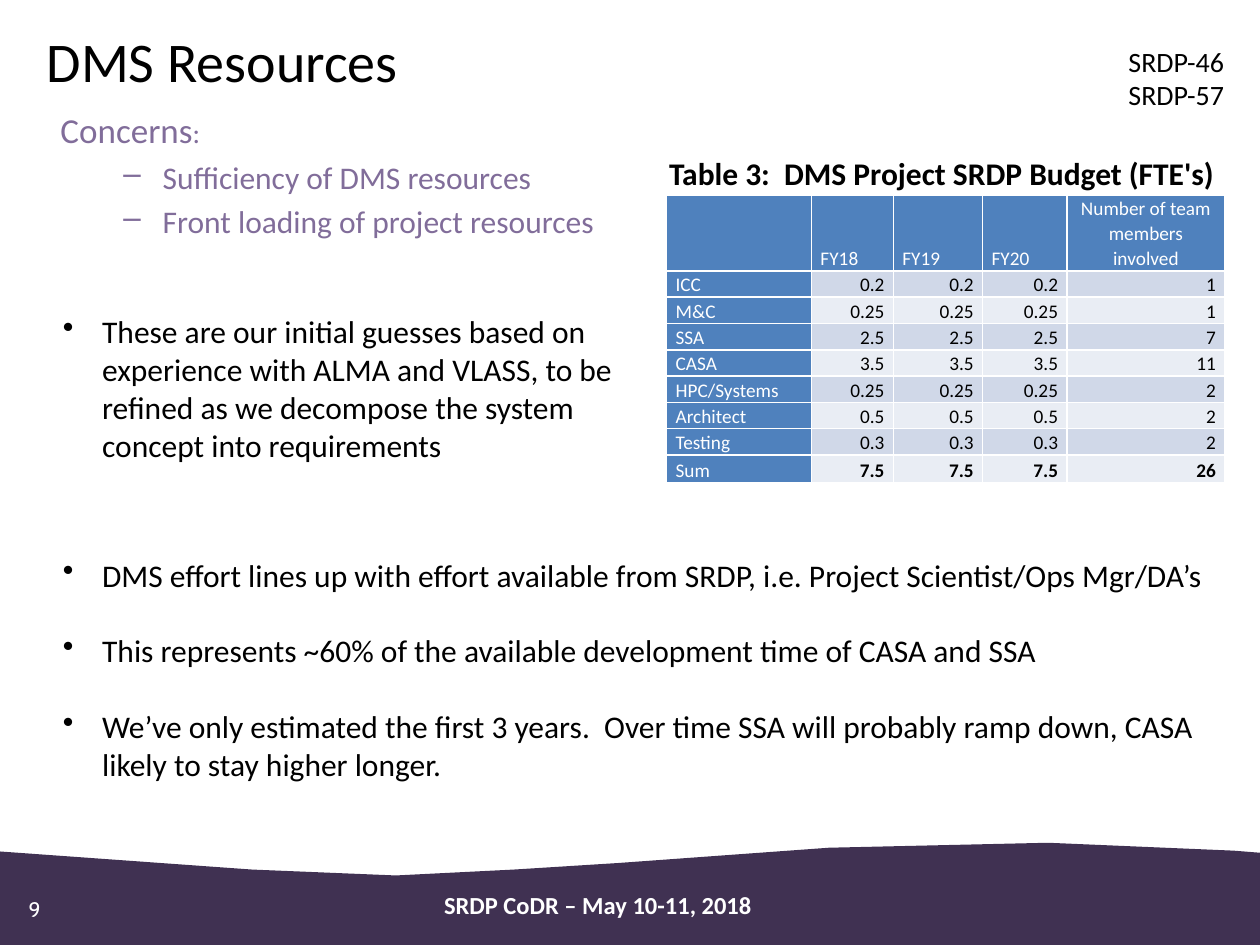
import pptx
import pptx.dml.color
import pptx.enum.text
import pptx.oxml
import pptx.oxml.ns
import pptx.util
from pptx.util import Cm

ALIGN = pptx.enum.text.PP_ALIGN
ANCHOR = pptx.enum.text.MSO_ANCHOR
BLACK, WHITE = "000000", "FFFFFF"
LILAC, PLUM, BLUE = "816D9A", "403152", "4F81BD"
BANDS = ("D0D8E8", "E9EDF4")


def color(value):
    return pptx.dml.color.RGBColor.from_string(value)


def xml(tag, attributes, content=""):
    space = pptx.oxml.ns.nsdecls("a")
    return pptx.oxml.parse_xml(f"<a:{tag} {space} {attributes}>{content}</a:{tag}>")


class SlideBuilder:
    def __init__(self, page, font="Calibri"):
        self.page = page
        self.font = font

    def add_span(self, para, text, size, fill=BLACK, bold=False, font=None):
        span = para.add_run()
        span.text = text
        values = {"name": font or self.font, "size": pptx.util.Pt(size), "bold": bold}
        for name, value in values.items():
            setattr(span.font, name, value)
        span.font.color.rgb = color(fill)

    def frame(self, frame, margins=(0.25, 0.13), anchor=ANCHOR.TOP):
        side, top = (Cm(margin) for margin in margins)
        values = {"word_wrap": True, "auto_size": pptx.enum.text.MSO_AUTO_SIZE.NONE,
                  "margin_left": side, "margin_right": side, "margin_top": top,
                  "margin_bottom": top, "vertical_anchor": anchor}
        for name, value in values.items():
            setattr(frame, name, value)
        return frame

    def bullet(self, para, mark, left, hanging):
        properties = para._p.get_or_add_pPr()
        properties.set("marL", str(Cm(left)))
        properties.set("indent", str(-Cm(hanging)))
        properties.append(xml("buChar", f'char="{mark}"'))

    def title(self, text, place, size):
        box = self.page.shapes.title
        for name, value in zip(("left", "top", "width", "height"), place):
            setattr(box, name, Cm(value))
        para = self.frame(box.text_frame).paragraphs[0]
        para.alignment = ALIGN.LEFT
        self.add_span(para, text, size)

    def text(self, place, lines, size, align=ALIGN.LEFT, gap=0, mark=None,
             left=0.79, margins=(0.25, 0.13), **style):
        box = self.page.shapes.add_textbox(*map(Cm, place))
        frame = self.frame(box.text_frame, margins)
        for index, line in enumerate(lines):
            para = frame.paragraphs[0] if index == 0 else frame.add_paragraph()
            if mark:
                self.bullet(para, mark, left, 0.79)
            para.alignment = align
            para.space_before = pptx.util.Pt(gap if index else 0)
            self.add_span(para, line, size, **style)
        return frame

    def outline(self, points, fill):
        start, *others = [(int(Cm(x)), int(Cm(y))) for x, y in points]
        builder = self.page.shapes.build_freeform(*start)
        builder.add_line_segments(others, close=True)
        shape = builder.convert_to_shape()
        shape.shadow.inherit = False
        shape.fill.solid()
        shape.fill.fore_color.rgb = color(fill)
        shape.line.fill.background()

    def cell(self, cell, text, fill, align, text_fill, bold):
        properties = cell._tc.get_or_add_tcPr()
        for side in "LRTB":
            properties.append(xml(f"ln{side}", 'w="12700"',
                                  f'<a:solidFill><a:srgbClr val="{WHITE}"/></a:solidFill>'))
        cell.fill.solid()
        cell.fill.fore_color.rgb = color(fill)
        values = {"margin_left": Cm(0.18), "margin_right": Cm(0.18), "margin_top": 0,
                  "margin_bottom": 0, "vertical_anchor": ANCHOR.BOTTOM}
        for name, value in values.items():
            setattr(cell, name, value)
        para = cell.text_frame.paragraphs[0]
        para.alignment, para.line_spacing = align, 1.06
        if text:
            self.add_span(para, text, 11, text_fill, bold)

    def table(self, place, rows, widths, heights):
        table = self.page.shapes.add_table(len(rows), len(widths), *map(Cm, place)).table
        for column, width in zip(table.columns, widths):
            column.width = Cm(width)
        for row, height in zip(table.rows, heights):
            row.height = Cm(height)
        for r, row in enumerate(rows):
            for c, value in enumerate(row):
                heading = r == 0 or c == 0
                fill = BLUE if heading else BANDS[(r - 1) % 2]
                align = ALIGN.LEFT if heading else ALIGN.RIGHT
                if r == 0 and c == len(row) - 1:
                    align = ALIGN.CENTER
                self.cell(table.cell(r, c), value, fill, align,
                          WHITE if heading else BLACK, row[0] == "Sum" and not heading)


def main():
    deck = pptx.Presentation()
    deck.slide_width, deck.slide_height = Cm(25.4), Cm(19.05)
    slide = SlideBuilder(deck.slides.add_slide(deck.slide_layouts[5]))

    # Footer wave, page number and event
    slide.outline([(-0.23, 17.15), (5.08, 17.53), (7.98, 17.65), (10.36, 17.53),
                   (12.45, 17.4), (16.71, 17.09), (21.13, 16.99), (24.87, 17.15),
                   (25.76, 17.22), (25.73, 19.3), (-0.18, 19.25)], PLUM)
    slide.text((0.58, 18.08, 10.46, 0.61), ["9"], 12, margins=(0, 0),
               fill=WHITE, font="Cabin")
    slide.text((4.83, 17.81, 14.45, 1.07), ["SRDP CoDR – May 10-11, 2018"], 14,
               align=ALIGN.CENTER, fill=WHITE, bold=True)

    # Title and requirement numbers
    slide.title("DMS Resources", (0.69, 0.41, 23.98, 1.32), 32)
    slide.text((22.5, 0.76, 2.57, 1.63), ["SRDP-46", "SRDP-57"], 16)

    # Concerns
    heading = slide.text((0.97, 2.06, 12, 1.1), ["Concerns"], 20, fill=LILAC)
    slide.add_span(heading.paragraphs[0], ":", 16, LILAC)
    slide.text((0.97, 3.05, 12, 2),
               ["Sufficiency of DMS resources", "Front loading of project resources"],
               18, gap=3.6, mark="–", left=2.06, fill=LILAC)

    # Budget table
    budget = [("ICC", "0.2", "1"), ("M&C", "0.25", "1"), ("SSA", "2.5", "7"),
              ("CASA", "3.5", "11"), ("HPC/Systems", "0.25", "2"),
              ("Architect", "0.5", "2"), ("Testing", "0.3", "2"), ("Sum", "7.5", "26")]
    rows = [("", "FY18", "FY19", "FY20", "Number of team members involved")]
    rows += [(team, effort, effort, effort, people) for team, effort, people in budget]
    slide.table((13.44, 3.94, 11.25, 5.72), rows, (2.92, 1.65, 1.8, 1.7, 3.18),
                [1.09] + [0.53] * 7 + [0.56])
    slide.text((12.57, 2.97, 12.83, 1.8), ["Table 3:  DMS Project SRDP Budget (FTE's)"],
               18, align=ALIGN.CENTER, bold=True)

    # Remarks
    slide.text((1.02, 6.17, 11.99, 3.33),
               ["These are our initial guesses based on experience with ALMA and VLASS, "
                "to be refined as we decompose the system concept into requirements"],
               18, mark="•")
    slide.text((1.02, 11.07, 23.67, 4.88),
               ["DMS effort lines up with effort available from SRDP, i.e. "
                "Project Scientist/Ops Mgr/DA’s",
                "This represents ~60% of the available development time of CASA and SSA",
                "We’ve only estimated the first 3 years.  Over time SSA will probably "
                "ramp down, CASA likely to stay higher longer."],
               18, gap=21.6, mark="•")

    deck.save("out.pptx")


if __name__ == "__main__":
    main()
